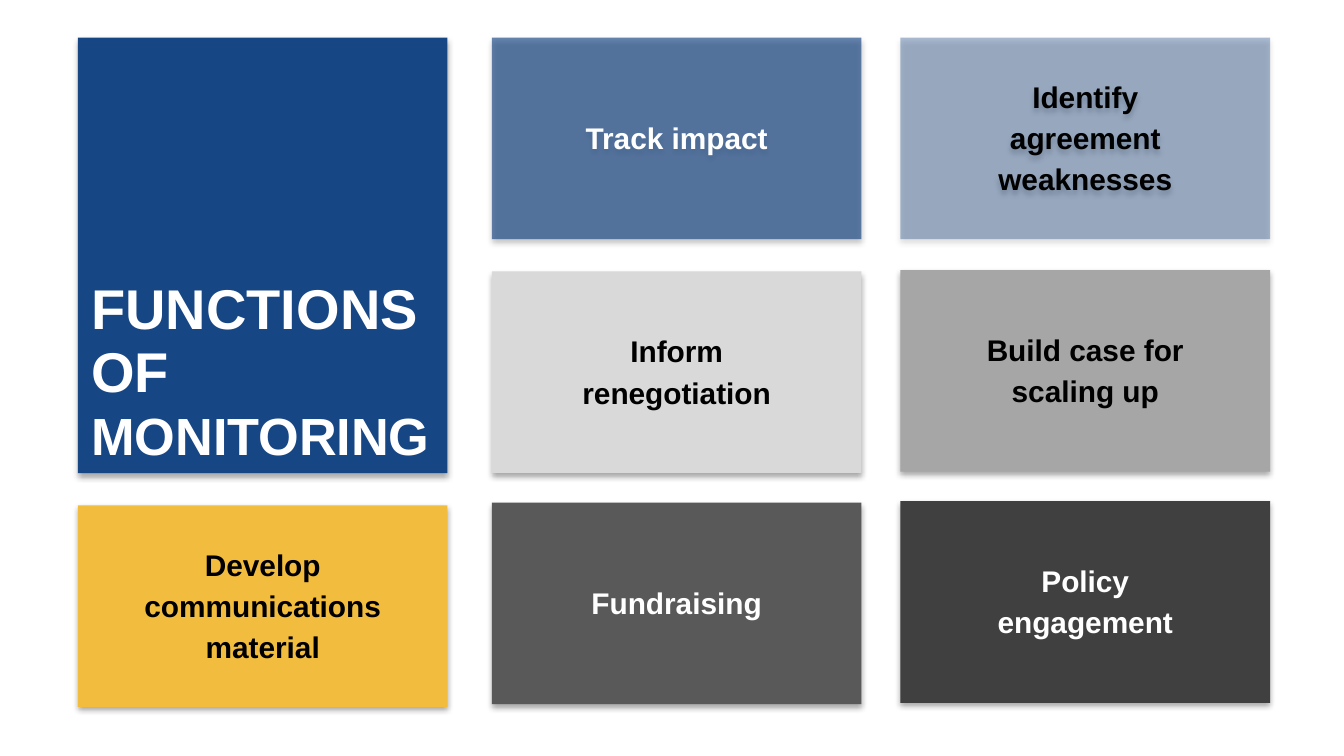
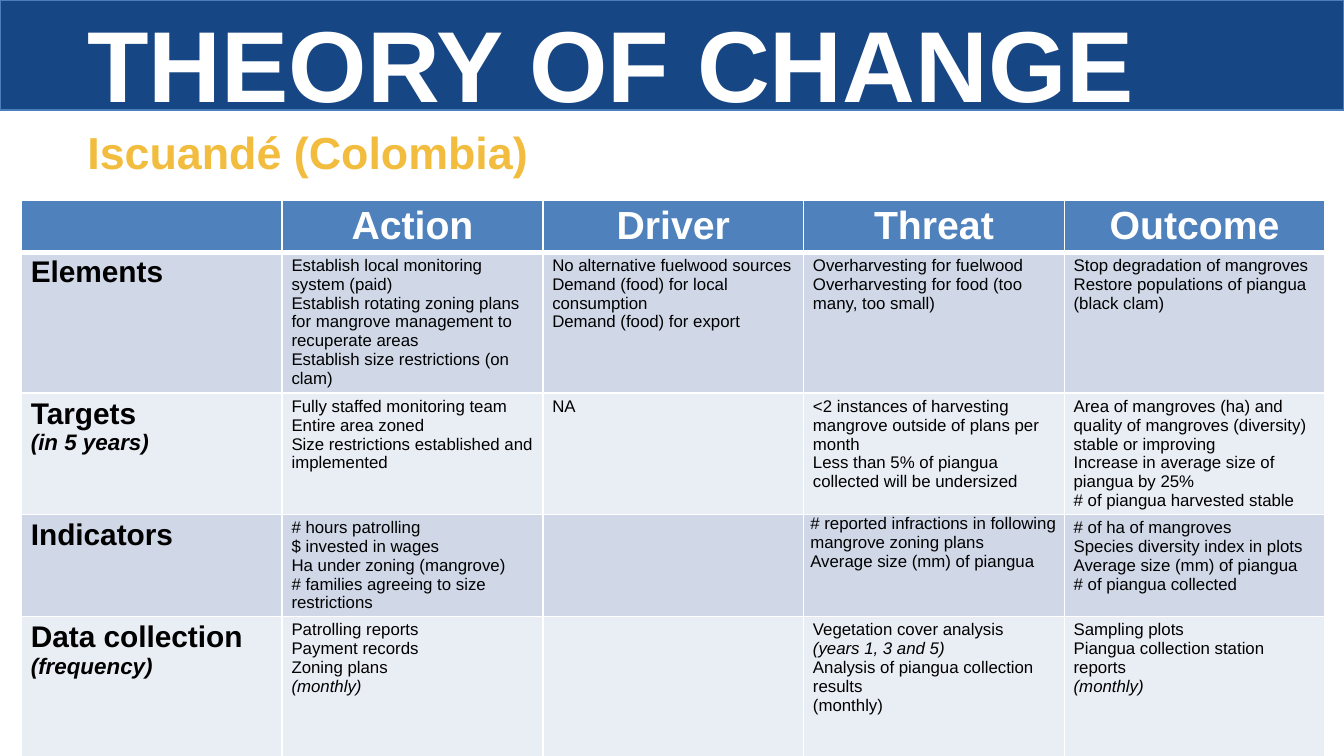
from lxml import etree
from pptx import Presentation
from pptx.dml.color import RGBColor
from pptx.enum.shapes import MSO_SHAPE
from pptx.enum.text import MSO_ANCHOR, MSO_AUTO_SIZE, PP_ALIGN
from pptx.oxml import parse_xml
from pptx.oxml.ns import qn
from pptx.util import Inches, Pt

FONT = "Arial"
NAVY, GOLD, WHITE, BLACK = "174685", "F2BD3E", "FFFFFF", "000000"
DRAWING = 'xmlns:a="http://schemas.openxmlformats.org/drawingml/2006/main"'


def paint(color_format, value):
    """Give a fill a solid hex colour."""
    color_format.solid()
    color_format.fore_color.rgb = RGBColor.from_string(value)


def add_span(para, text, size, color, bold=True, italic=False):
    span = para.add_run()
    span.text = text
    span.font.name, span.font.size = FONT, Pt(size)
    span.font.bold, span.font.italic = bold, italic
    paint(span.font.fill, color)


# Widescreen deck, 16:9
deck = Presentation()
deck.slide_width = Inches(10)
deck.slide_height = deck.slide_width * 9 // 16
title_only = deck.slide_layouts[5]

# Slide 1: title tile
functions = deck.slides.add_slide(title_only)
title = functions.shapes.title
title.left, title.top = Inches(0.58), Inches(0.28)
title.width, title.height = Inches(2.75), Inches(3.24)
paint(title.fill, NAVY)
frame = title.text_frame
frame.word_wrap, frame.auto_size = True, MSO_AUTO_SIZE.NONE
frame.vertical_anchor = MSO_ANCHOR.BOTTOM
for i, (word, size) in enumerate([("FUNCTIONS", 30), ("OF", 30), ("MONITORING", 28)]):
    para = frame.add_paragraph() if i else frame.paragraphs[0]
    para.alignment, para.line_spacing = PP_ALIGN.LEFT, Pt(33.6)
    add_span(para, word, size, WHITE)

# Slide 1: function tiles (left, top, text, fill, opacity in percent, text colour)
tiles = [
    (3.66, 0.28, "Track impact", NAVY, 65, WHITE),
    (6.7, 0.28, "Identify agreement weaknesses", NAVY, 36, BLACK),
    (3.66, 2.02, "Inform renegotiation", "D9D9D9", 100, BLACK),
    (6.7, 2.01, "Build case for scaling up", "A6A6A6", 100, BLACK),
    (0.58, 3.76, "Develop communications material", GOLD, 100, BLACK),
    (3.66, 3.74, "Fundraising", "595959", 100, WHITE),
    (6.7, 3.73, "Policy engagement", "404040", 100, WHITE),
]
shadowed = [title]
for left, top, text, fill, opacity, color in tiles:
    tile = functions.shapes.add_shape(
        MSO_SHAPE.RECTANGLE, Inches(left), Inches(top), Inches(2.75), Inches(1.5))
    paint(tile.fill, fill)
    if opacity < 100:
        tint = tile.element.spPr.find(".//" + qn("a:srgbClr"))
        etree.SubElement(tint, qn("a:alpha"), val=str(opacity * 1000))
    frame = tile.text_frame
    frame.word_wrap, frame.vertical_anchor = True, MSO_ANCHOR.MIDDLE
    frame.margin_left = frame.margin_right = Inches(0.4)
    frame.margin_top, frame.margin_bottom = 0, Inches(0.05)
    para = frame.paragraphs[0]
    para.alignment, para.line_spacing = PP_ALIGN.CENTER, Pt(22)
    add_span(para, text, 16, color)
    shadowed.append(tile)

for tile in shadowed:
    tile.line.fill.background()
    tile.shadow.inherit = False
    tile.element.spPr.find(qn("a:effectLst")).append(parse_xml(
        f'<a:outerShdw {DRAWING} blurRad="{Pt(3.1)}" dist="{Pt(1.8)}" dir="5400000" '
        f'rotWithShape="0"><a:srgbClr val="{BLACK}"><a:alpha val="35000"/>'
        '</a:srgbClr></a:outerShdw>'))

# Slide 2: band behind the title
theory = deck.slides.add_slide(title_only)
title = theory.shapes.title
band = theory.shapes.add_shape(MSO_SHAPE.RECTANGLE, 0, 0, deck.slide_width, Inches(0.82))
band.shadow.inherit = False
paint(band.fill, NAVY)
paint(band.line.fill, "4B7EBC")
band.line.width = Pt(0.75)
title.element.addprevious(band.element)

# Slide 2: table; a leading underscore marks an italic line
headings = ["", "Action", "Driver", "Threat", "Outcome"]
body = [
    [["Elements"],
     ["Establish local monitoring system (paid)",
      "Establish rotating zoning plans for mangrove management to recuperate areas",
      "Establish size restrictions (on clam)"],
     ["No alternative fuelwood sources", "Demand (food) for local consumption",
      "Demand (food) for export"],
     ["Overharvesting for fuelwood", "Overharvesting for food (too many, too small)"],
     ["Stop degradation of mangroves", "Restore populations of piangua (black clam)"]],
    [["Targets", "_(in 5 years)"],
     ["Fully staffed monitoring team", "Entire area zoned",
      "Size restrictions established and implemented"],
     ["NA"],
     ["<2 instances of harvesting mangrove outside of plans per month",
      "Less than 5% of piangua collected will be undersized"],
     ["Area of mangroves (ha) and quality of mangroves (diversity) stable or improving",
      "Increase in average size of piangua by 25%", "# of piangua harvested stable"]],
    [["Indicators"],
     ["# hours patrolling", "$ invested in wages", "Ha under zoning (mangrove)",
      "# families agreeing to size restrictions"],
     [],
     ["# reported infractions in following mangrove zoning plans",
      "Average size (mm) of piangua"],
     ["# of ha of mangroves", "Species diversity index in plots",
      "Average size (mm) of piangua", "# of piangua collected"]],
    [["Data collection", "_(frequency)"],
     ["Patrolling reports", "Payment records", "Zoning plans", "_(monthly)"],
     [],
     ["Vegetation cover analysis", "_(years 1, 3 and 5)",
      "Analysis of piangua collection results", "(monthly)"],
     ["Sampling plots", "Piangua collection station reports", "_(monthly)"]],
]
rows = [[[name] if name else [] for name in headings]] + body
row_heights = [0.38, 1.05, 0.9, 0.76, 1.04]
table = theory.shapes.add_table(
    len(rows), len(headings), Inches(0.16), Inches(1.49),
    Inches(9.7), Inches(sum(row_heights))).table
for column in table.columns:
    column.width = Inches(1.94)
for r, (row, height) in enumerate(zip(rows, row_heights)):
    table.rows[r].height = Inches(height)
    for c, lines in enumerate(row):
        cell = table.cell(r, c)
        tight = (r, c) == (3, 3)
        cell.margin_left = cell.margin_right = Inches(0.05 if tight else 0.07)
        cell.margin_top = cell.margin_bottom = Inches(0 if tight else 0.03)
        for side in "LRTB":
            thick = (r == 0 and side == "B") or (r == 1 and side == "T")
            cell._tc.get_or_add_tcPr().append(parse_xml(
                f'<a:ln{side} {DRAWING} w="{Pt(3 if thick else 1)}"><a:solidFill>'
                f'<a:srgbClr val="{WHITE}"/></a:solidFill></a:ln{side}>'))
        paint(cell.fill, "4F81BD" if r == 0 else "D0D8E8" if r % 2 else "E9EDF4")
        for i, line in enumerate(lines):
            para = cell.text_frame.add_paragraph() if i else cell.text_frame.paragraphs[0]
            text, italic = line.removeprefix("_"), line.startswith("_")
            if r == 0:
                para.alignment = PP_ALIGN.CENTER
                add_span(para, text, 21, WHITE)
            elif c == 0:
                add_span(para, text, 12 if italic else 16, BLACK, True, italic)
            else:
                add_span(para, text, 9, BLACK, False, italic)

# Slide 2: title and subtitle
title.left, title.top = Inches(0.61), Inches(0.59)
title.width, title.height = Inches(9.27), Inches(0.64)
frame = title.text_frame
frame.word_wrap, frame.auto_size = True, MSO_AUTO_SIZE.NONE
frame.vertical_anchor = MSO_ANCHOR.MIDDLE
frame.margin_left = frame.margin_right = Inches(0.04)
frame.margin_top = frame.margin_bottom = 0
for i, (text, size, color) in enumerate(
        [("THEORY OF CHANGE", 54, WHITE), ("Iscuandé (Colombia)", 24, GOLD)]):
    para = frame.add_paragraph() if i else frame.paragraphs[0]
    para.alignment, para.line_spacing = PP_ALIGN.LEFT, Pt(30)
    add_span(para, text, size, color)

deck.save("out.pptx")
